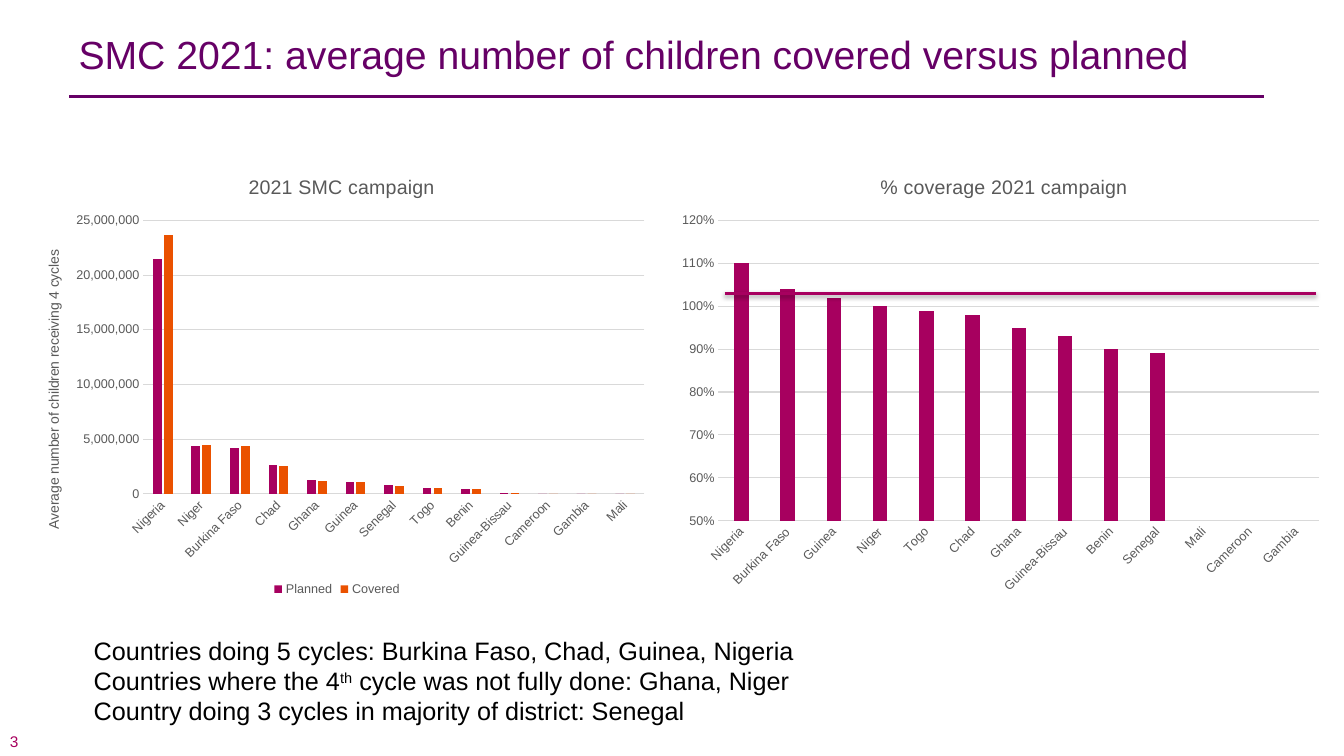
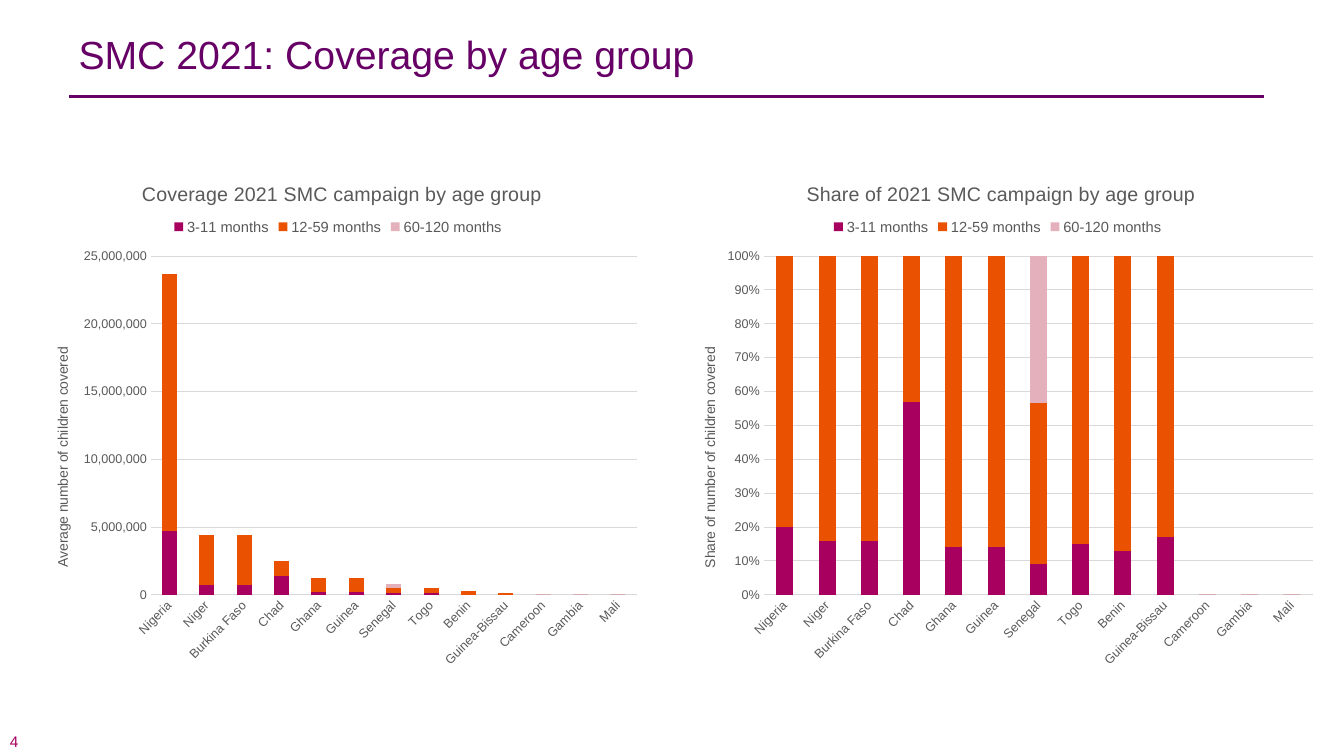
"""Build two slides comparing planned and achieved SMC coverage in 2021."""
from dataclasses import dataclass
from typing import Any, Optional

import lxml.etree
import pptx
import pptx.chart.data
import pptx.dml.color
import pptx.enum.chart
import pptx.enum.text
import pptx.oxml.ns
import pptx.util

Cm = pptx.util.Cm
Pt = pptx.util.Pt
qn = pptx.oxml.ns.qn
ChartType = pptx.enum.chart.XL_CHART_TYPE
LegendPosition = pptx.enum.chart.XL_LEGEND_POSITION
Anchor = pptx.enum.text.MSO_ANCHOR


@dataclass(frozen=True)
class Theme:
    font: str = "Arial"
    title: str = "660066"
    berry: str = "A7005F"
    orange: str = "EA5100"
    pink: str = "E4B0BB"
    body: str = "000000"
    label: str = "595959"
    grid: str = "D9D9D9"
    title_size: float = 28
    title_spacing: float = 26
    body_size: float = 18
    number_size: float = 11
    chart_title_size: float = 14
    axis_title_size: float = 10
    tick_size: float = 9
    rule_width: float = 2
    grid_width: float = 0.75


@dataclass(frozen=True)
class Area:
    left: float
    top: float
    width: float
    height: float

    def lengths(self) -> tuple:
        return Cm(self.left), Cm(self.top), Cm(self.width), Cm(self.height)


@dataclass(frozen=True)
class Series:
    name: str
    color: str
    values: tuple


@dataclass(frozen=True)
class Legend:
    position: Any
    size: float
    corner: tuple


@dataclass(frozen=True)
class Scale:
    number_format: str
    minimum: Optional[float] = None
    maximum: Optional[float] = None
    step: Optional[float] = None
    title: str = ""
    title_corner: tuple = ()


@dataclass(frozen=True)
class ColumnChart:
    kind: Any
    area: Area
    plot: tuple
    title: str
    title_corner: tuple
    countries: tuple
    series: tuple
    scale: Scale
    gap: int
    overlap: int
    legend: Optional[Legend] = None


@dataclass(frozen=True)
class Span:
    text: str
    raised: bool = False


THEME = Theme()
PAGE_NUMBER = Area(0, 18.44, 2.69, 0.46)
TITLE = Area(1.73, 0.91, 30.15, 1.9)
NOTES = Area(2.11, 15.88, 24.08, 2.57)

BY_SIZE = ("Nigeria", "Niger", "Burkina Faso", "Chad", "Ghana", "Guinea", "Senegal",
           "Togo", "Benin", "Guinea-Bissau", "Cameroon", "Gambia", "Mali")
BY_COVERAGE = ("Nigeria", "Burkina Faso", "Guinea", "Niger", "Togo", "Chad", "Ghana",
               "Guinea-Bissau", "Benin", "Senegal", "Mali", "Cameroon", "Gambia")
AGE_GROUPS = (("3-11 months", THEME.berry), ("12-59 months", THEME.orange),
              ("60-120 months", THEME.pink))


def millions(*values: float) -> tuple:
    return tuple(round(value * 1_000_000) for value in values)


def age_series(*rows: tuple) -> tuple:
    return tuple(Series(name, color, row) for (name, color), row in zip(AGE_GROUPS, rows))


CAMPAIGN_CHARTS = (
    ColumnChart(
        ChartType.COLUMN_CLUSTERED, Area(0.58, 3.86, 15.98, 11.3), (0.19, 0.15, 0.79, 0.61),
        "2021 SMC campaign", (0.35, 0.04), BY_SIZE,
        (Series("Planned", THEME.berry,
                millions(21.5, 4.4, 4.2, 2.6, 1.3, 1.1, 0.8, 0.5, 0.4, 0.1, 0, 0, 0)),
         Series("Covered", THEME.orange,
                millions(23.7, 4.5, 4.4, 2.5, 1.2, 1.1, 0.7, 0.5, 0.4, 0.1, 0, 0, 0))),
        Scale("#,##0", 0, 25_000_000, 5_000_000,
              "Average number of children receiving 4 cycles", (0.03, 0.21)),
        219, -27, Legend(LegendPosition.BOTTOM, 9, (0.39, 0.95))),
    ColumnChart(
        ChartType.COLUMN_CLUSTERED, Area(16.94, 3.86, 16.64, 11.3), (0.07, 0.15, 0.91, 0.67),
        "% coverage 2021 campaign", (0.31, 0.04), BY_COVERAGE,
        (Series("Series 1", THEME.berry,
                (1.1, 1.04, 1.02, 1, 0.99, 0.98, 0.95, 0.93, 0.9, 0.89, None, None, None)),),
        Scale("0%", 0.5, 1.2, 0.1), 219, -27),
)

AGE_CHARTS = (
    ColumnChart(
        ChartType.COLUMN_STACKED, Area(0.66, 3.96, 15.7, 13.13), (0.2, 0.19, 0.78, 0.65),
        "Coverage 2021 SMC campaign by age group", (0.18, 0.04), BY_SIZE,
        age_series(millions(4.7, 0.7, 0.7, 1.4, 0.2, 0.2, 0.1, 0.1, 0, 0, 0, 0, 0),
                   millions(19, 3.7, 3.7, 1.1, 1, 1, 0.4, 0.4, 0.3, 0.1, 0, 0, 0),
                   millions(0, 0, 0, 0, 0, 0, 0.3, 0, 0, 0, 0, 0, 0)),
        Scale("#,##0", 0, 25_000_000, 5_000_000,
              "Average number of children covered", (0.04, 0.36)),
        150, 100, Legend(LegendPosition.TOP, 10.5, (0.23, 0.11))),
    ColumnChart(
        ChartType.COLUMN_STACKED_100, Area(16.94, 3.96, 16.48, 13.13), (0.14, 0.19, 0.84, 0.65),
        "Share of 2021 SMC campaign by age group", (0.2, 0.04), BY_SIZE,
        age_series((20, 16, 16, 57, 14, 14, 9, 15, 13, 17, 0, 0, 0),
                   (80, 84, 84, 43, 86, 86, 47, 85, 87, 83, 0, 0, 0),
                   (0, 0, 0, 0, 0, 0, 43, 0, 0, 0, 0, 0, 0)),
        Scale("0%", title="Share of number of children covered", title_corner=(0.04, 0.36)),
        150, 100, Legend(LegendPosition.TOP, 10.5, (0.24, 0.11))),
)

CYCLE_NOTES = (
    (Span("Countries doing 5 cycles: Burkina Faso, Chad, Guinea, Nigeria"),),
    (Span("Countries where the 4"), Span("th", True),
     Span(" cycle was not fully done: Ghana, Niger")),
    (Span("Country doing 3 cycles in majority of district: Senegal"),),
)


def rgb(color: str) -> pptx.dml.color.RGBColor:
    return pptx.dml.color.RGBColor.from_string(color)


def style_font(font: Any, size: float, color: str) -> None:
    font.name = THEME.font
    font.size = Pt(size)
    font.bold = False
    font.color.rgb = rgb(color)


def style_line(line: Any, color: str, width: float) -> None:
    line.color.rgb = rgb(color)
    line.width = Pt(width)


def add_text(page: Any, area: Area, lines: tuple, size: float, color: str) -> Any:
    box = page.shapes.add_textbox(*area.lengths())
    frame = box.text_frame
    frame.word_wrap = True
    for index, spans in enumerate(lines):
        para = frame.paragraphs[0] if index == 0 else frame.add_paragraph()
        for span in spans:
            run = para.add_run()
            run.text = span.text
            style_font(run.font, size, color)
            if span.raised:
                run.font._element.set("baseline", "30000")
    return frame


def add_rule(page: Any, left: float, right: float, y: float, color: str,
             shadow: bool = False) -> None:
    rule = page.shapes.add_connector(
        pptx.enum.shapes.MSO_CONNECTOR.STRAIGHT, Cm(left), Cm(y), Cm(right), Cm(y))
    style_line(rule.line, color, THEME.rule_width)
    effects = lxml.etree.SubElement(rule._element.spPr, qn("a:effectLst"))
    if shadow:
        outer = lxml.etree.SubElement(effects, qn("a:outerShdw"), blurRad=str(Pt(3.1)),
                                      dist=str(Pt(1.6)), dir="5400000", rotWithShape="0")
        tint = lxml.etree.SubElement(outer, qn("a:srgbClr"), val=THEME.body)
        lxml.etree.SubElement(tint, qn("a:alpha"), val="38000")


def place(element: Any, index: int, position: tuple) -> None:
    layout = element.find(qn("c:layout"))
    if layout is None:
        layout = lxml.etree.Element(qn("c:layout"))
        element.insert(index, layout)
    manual = lxml.etree.SubElement(layout, qn("c:manualLayout"))
    if len(position) == 4:
        lxml.etree.SubElement(manual, qn("c:layoutTarget"), val="inner")
    for name in ("xMode", "yMode"):
        lxml.etree.SubElement(manual, qn(f"c:{name}"), val="edge")
    for name, value in zip("xywh", position):
        lxml.etree.SubElement(manual, qn(f"c:{name}"), val=str(value))


def write_chart_title(title: Any, text: str, size: float, corner: tuple) -> None:
    run = title.text_frame.paragraphs[0].add_run()
    run.text = text
    style_font(run.font, size, THEME.label)
    place(title._element, 1, corner)


def style_axes(chart: Any, scale: Scale) -> None:
    category, value = chart.category_axis, chart.value_axis
    for axis in (category, value):
        axis.major_tick_mark = pptx.enum.chart.XL_TICK_MARK.NONE
        axis.minor_tick_mark = pptx.enum.chart.XL_TICK_MARK.NONE
        style_font(axis.tick_labels.font, THEME.tick_size, THEME.label)
    category._element.find(qn("c:txPr")).find(qn("a:bodyPr")).set("rot", "-2700000")
    style_line(category.format.line, THEME.grid, THEME.grid_width)
    value.format.line.fill.background()
    value.has_major_gridlines = True
    style_line(value.major_gridlines.format.line, THEME.grid, THEME.grid_width)
    value.minimum_scale, value.maximum_scale = scale.minimum, scale.maximum
    value.major_unit = scale.step
    value.tick_labels.number_format = scale.number_format
    value.tick_labels.number_format_is_linked = False
    if scale.title:
        title = value.axis_title
        write_chart_title(title, scale.title, THEME.axis_title_size, scale.title_corner)
        body = next(title._element.iter(qn("a:bodyPr")))
        body.set("rot", "-5400000")
        body.set("vert", "horz")


def add_column_chart(page: Any, item: ColumnChart) -> None:
    data = pptx.chart.data.CategoryChartData()
    data.categories = item.countries
    for series in item.series:
        data.add_series(series.name, series.values)
    chart = page.shapes.add_chart(item.kind, *item.area.lengths(), data).chart
    style_font(chart.font, THEME.axis_title_size, THEME.body)
    chart.has_title = True
    write_chart_title(chart.chart_title, item.title, THEME.chart_title_size, item.title_corner)
    plot = chart.plots[0]
    plot.gap_width, plot.overlap = item.gap, item.overlap
    plot.vary_by_categories = False
    for drawn, series in zip(plot.series, item.series):
        drawn.format.fill.solid()
        drawn.format.fill.fore_color.rgb = rgb(series.color)
        drawn.invert_if_negative = False
    style_axes(chart, item.scale)
    chart.has_legend = item.legend is not None
    if item.legend:
        chart.legend.position = item.legend.position
        chart.legend.include_in_layout = False
        style_font(chart.legend.font, item.legend.size, THEME.label)
        place(chart.legend._element, 1, item.legend.corner)
    place(chart._chartSpace.chart.plotArea, 0, item.plot)


def add_page(deck: Any, number: int, title: str, charts: tuple) -> Any:
    page = deck.slides.add_slide(deck.slide_layouts[6])
    frame = add_text(page, PAGE_NUMBER, ((Span(str(number)),),), THEME.number_size, THEME.berry)
    frame.vertical_anchor = Anchor.MIDDLE
    frame.margin_top = frame.margin_bottom = 0
    frame = add_text(page, TITLE, ((Span(title),),), THEME.title_size, THEME.title)
    frame.paragraphs[0].line_spacing = Pt(THEME.title_spacing)
    add_rule(page, 1.75, 31.85, 2.44, THEME.title)
    for item in charts:
        add_column_chart(page, item)
    return page


def main() -> None:
    deck = pptx.Presentation()
    deck.slide_width, deck.slide_height = Cm(33.87), Cm(19.05)
    page = add_page(deck, 3, "SMC 2021: average number of children covered versus planned",
                    CAMPAIGN_CHARTS)
    add_rule(page, 18.26, 33.17, 7.39, THEME.berry, shadow=True)
    notes = add_text(page, NOTES, CYCLE_NOTES, THEME.body_size, THEME.body)
    notes.auto_size = pptx.enum.text.MSO_AUTO_SIZE.SHAPE_TO_FIT_TEXT
    add_page(deck, 4, "SMC 2021: Coverage by age group", AGE_CHARTS)
    deck.save("out.pptx")


if __name__ == "__main__":
    main()
